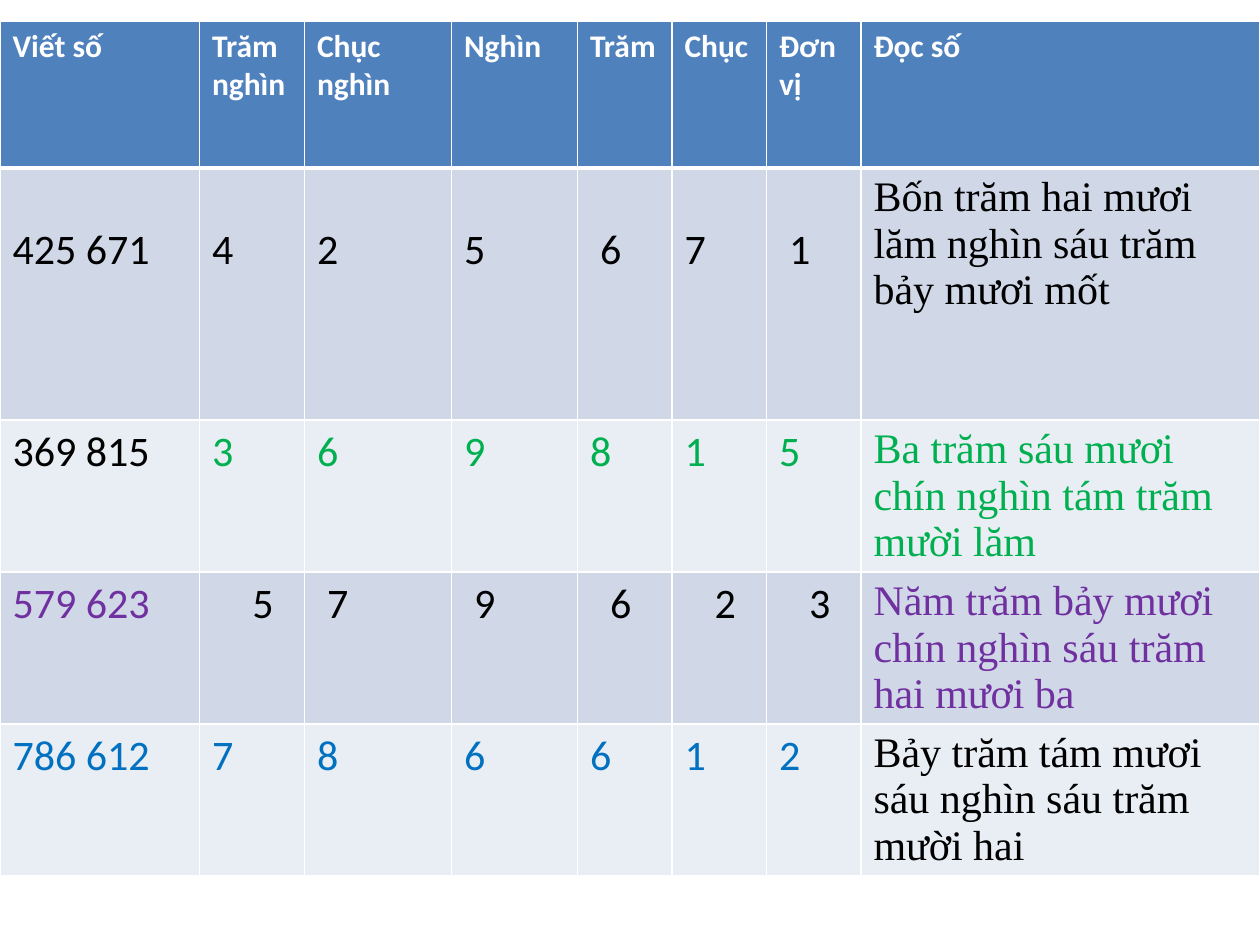
from lxml import etree
from pptx import Presentation, util as u
from pptx.dml.color import RGBColor
from pptx.oxml import ns

GRID = u.Inches(1 / 12)
COLUMN_SPANS = [19, 10, 14, 12, 9, 9, 9, 38]
ROW_SPANS = [14, 24, 13.6, 13.6, 13.6]
TABLE_TOP = 2
INDENT_STEP = 0.08
BLACK, WHITE, GREEN, PURPLE, BLUE = "000000", "FFFFFF", "00B050", "7030A0", "0070C0"
HEADER_FILL, BAND_FILLS = "4F81BD", ["D0D8E8", "E9EDF4"]
HEADINGS = ["Viết số", "Trăm nghìn", "Chục nghìn", "Nghìn", "Trăm", "Chục", "Đơn vị", "Đọc số"]
NUMBERS = [
    ("425 671", "Bốn trăm hai mươi lăm nghìn sáu trăm bảy mươi mốt",
     (BLACK, BLACK, BLACK), [0, 0, 0, 1, 0, 1], 0.45),
    ("369 815", "Ba trăm sáu mươi chín nghìn tám trăm mười lăm",
     (BLACK, GREEN, GREEN), [0] * 6, 0.05),
    ("579 623", "Năm trăm bảy mươi chín nghìn sáu trăm hai mươi ba",
     (PURPLE, BLACK, PURPLE), [4, 1, 1, 2, 3, 3], 0.05),
    ("786 612", "Bảy trăm tám mươi sáu nghìn sáu trăm mười hai",
     (BLUE, BLUE, BLACK), [0] * 6, 0.05),
]


def rgb(value):
    return RGBColor.from_string(value)


def write(cell, words, size=24, font="Calibri", color=BLACK, bold=False, indent=0, top=0.05):
    cell.margin_left = u.Inches(0.1 + indent * INDENT_STEP)
    cell.margin_top = u.Inches(top)
    run = cell.text_frame.paragraphs[0].add_run()
    run.text = words
    run.font.size = u.Pt(size)
    run.font.name = font
    run.font.bold = bold
    run.font.color.rgb = rgb(color)


def paint(cell, fill, top=1, bottom=1):
    properties = cell._tc.get_or_add_tcPr()
    for side, width in {"L": 1, "R": 1, "T": top, "B": bottom}.items():
        border = etree.SubElement(properties, ns.qn(f"a:ln{side}"), w=str(u.Pt(width)))
        solid = etree.SubElement(border, ns.qn("a:solidFill"))
        etree.SubElement(solid, ns.qn("a:srgbClr"), val=WHITE)
    cell.fill.solid()
    cell.fill.fore_color.rgb = rgb(fill)


def add_place_value_table(slide):
    table = slide.shapes.add_table(
        len(ROW_SPANS), len(COLUMN_SPANS), 0, TABLE_TOP * GRID,
        sum(COLUMN_SPANS) * GRID, int(sum(ROW_SPANS) * GRID)).table
    for column, span in zip(table.columns, COLUMN_SPANS):
        column.width = span * GRID
    for row, span in zip(table.rows, ROW_SPANS):
        row.height = int(span * GRID)
    return table


def fill_header(cells):
    for cell, heading in zip(cells, HEADINGS):
        paint(cell, HEADER_FILL, bottom=3)
        write(cell, heading, size=18, color=WHITE, bold=True)


def fill_number(cells, fill, border_top, number, reading, colors, indents, top):
    number_color, digit_color, reading_color = colors
    number_cell, *digit_cells, reading_cell = cells
    for cell in cells:
        paint(cell, fill, top=border_top)
    write(number_cell, number, color=number_color, top=top)
    for cell, digit, indent in zip(digit_cells, number.replace(" ", ""), indents):
        write(cell, digit, color=digit_color, indent=indent, top=top)
    write(reading_cell, reading, font="Times New Roman", color=reading_color)


def main():
    deck = Presentation()
    deck.slide_width, deck.slide_height = u.Inches(10), u.Inches(7.5)
    slide = deck.slides.add_slide(deck.slide_layouts[6])
    header, *number_rows = add_place_value_table(slide).rows
    fill_header(header.cells)
    for index, (row, entry) in enumerate(zip(number_rows, NUMBERS)):
        fill_number(list(row.cells), BAND_FILLS[index % 2], 1 if index else 3, *entry)
    deck.save("out.pptx")


if __name__ == "__main__":
    main()
